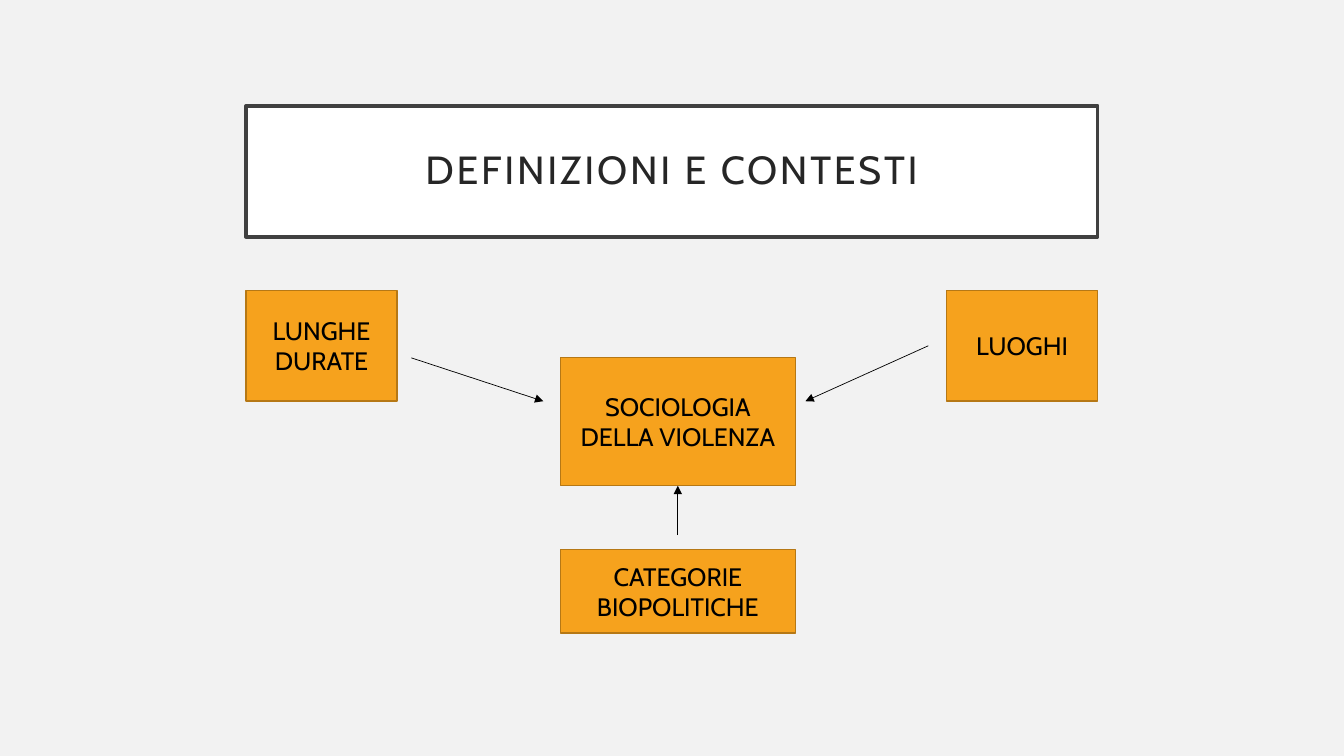
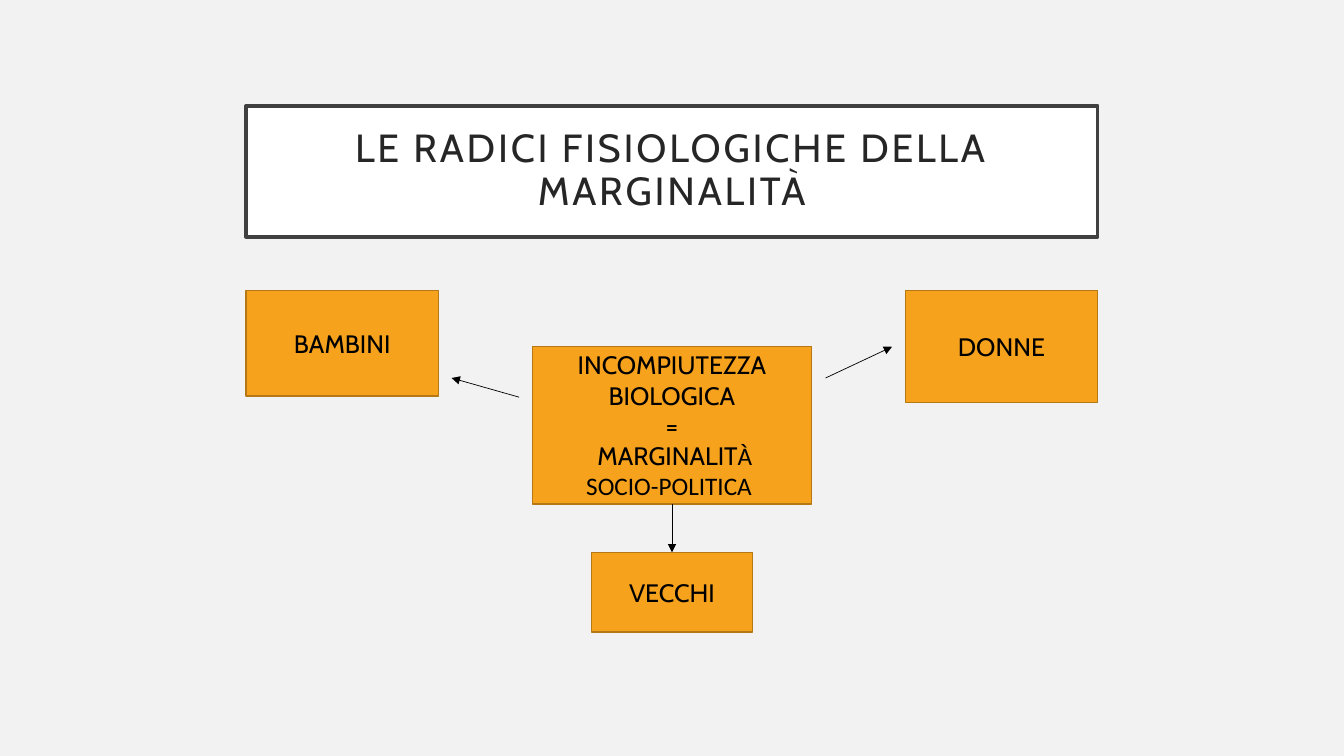
from dataclasses import dataclass
from typing import NamedTuple

from lxml import etree
from pptx import Presentation
from pptx.dml.color import RGBColor
from pptx.enum import shapes, text
from pptx.oxml import ns
from pptx.util import Pt

COLORS = {
    "background": "F2F2F2",
    "title_fill": "FFFFFF",
    "title_border": "404040",
    "title_text": "262626",
    "concept_fill": "F6A21D",
    "concept_border": "B67815",
    "ink": "000000",
}
FONT, ALT_FONT = "Cabin", "Calibri"
BOTTOM, TOP = 2, 0  # connection sites of a rectangle


class Area(NamedTuple):
    left: float
    top: float
    width: float
    height: float


class Point(NamedTuple):
    x: float
    y: float


class Joint(NamedTuple):
    concept: str
    site: int


class Span(NamedTuple):
    words: str
    font: str = FONT


@dataclass(frozen=True)
class BoxStyle:
    fill: str
    border: str
    border_width: float
    ink: str
    size: float
    margins: tuple[float, float] = (7.2, 3.6)  # horizontal, vertical
    line_spacing: float = 1.0
    tracking: float = 0


@dataclass(frozen=True)
class Concept:
    key: str
    area: Area
    paragraphs: list[list[Span]]


@dataclass(frozen=True)
class Arrow:
    start: Point | Joint
    end: Point | Joint


@dataclass(frozen=True)
class Diagram:
    title: str
    concepts: list[Concept]
    arrows: list[Arrow]


TITLE_AREA = Area(175.7, 75.6, 608.4, 93.6)
TITLE_STYLE = BoxStyle("title_fill", "title_border", 2.5, "title_text", 28,
                       (14.4, 14.4), 0.9, 2)
CONCEPT_STYLE = BoxStyle("concept_fill", "concept_border", 1, "ink", 18)

# Side concepts share the title's edges and one top line
LEFT, RIGHT = TITLE_AREA.left, TITLE_AREA.left + TITLE_AREA.width
SIDE_TOP = 207.4


def left_area(width: float, height: float) -> Area:
    return Area(LEFT, SIDE_TOP, width, height)


def right_area(width: float, height: float) -> Area:
    return Area(RIGHT - width, SIDE_TOP, width, height)


def centered_area(middle: float, top: float, width: float, height: float) -> Area:
    return Area(middle - width / 2, top, width, height)


CONTEXT_MIDDLE, ROOTS_MIDDLE = 484.2, 480

DIAGRAMS = [
    Diagram(
        "DEFINIZIONI E CONTESTI",
        [
            Concept("sociologia", centered_area(CONTEXT_MIDDLE, 255.6, 167.8, 91.4),
                    [[Span("SOCIOLOGIA DELLA VIOLENZA")]]),
            Concept("durate", left_area(108, 79.2), [[Span("LUNGHE DURATE")]]),
            Concept("luoghi", right_area(108, 79.2), [[Span("LUOGHI")]]),
            Concept("categorie", centered_area(CONTEXT_MIDDLE, 392.4, 167.8, 59.8),
                    [[Span("CATEGORIE BIOPOLITICHE")]]),
        ],
        [
            Arrow(Point(293.8, 255.6), Point(388.1, 286.6)),
            Arrow(Point(663.1, 247), Point(575.3, 286.6)),
            Arrow(Point(CONTEXT_MIDDLE, 382.3), Joint("sociologia", BOTTOM)),
        ],
    ),
    Diagram(
        "LE RADICI FISIOLOGICHE DELLA MARGINALITÀ",
        [
            Concept("incompiutezza", centered_area(ROOTS_MIDDLE, 247.7, 199.4, 112.3), [
                [Span("INCOMPIUTEZZA")],
                [Span("BIOLOGICA")],
                [Span("=")],
                [Span(" MARGINALIT"), Span("À", ALT_FONT)],
                [Span("SOCIO-POLITICA ", ALT_FONT)],
            ]),
            Concept("bambini", left_area(137.5, 75.6), [[Span("BAMBINI")]]),
            Concept("donne", right_area(137.5, 79.9), [[Span("DONNE")]]),
            Concept("vecchi", centered_area(ROOTS_MIDDLE, 394.6, 115.2, 56.9),
                    [[Span("VECCHI")]]),
        ],
        [
            Arrow(Point(370.8, 283.7), Point(322.6, 270)),
            Arrow(Point(589.7, 270), Point(637.2, 247.7)),
            Arrow(Joint("incompiutezza", BOTTOM), Joint("vecchi", TOP)),
        ],
    ),
]


def rgb(name: str) -> RGBColor:
    return RGBColor.from_string(COLORS[name])


def write_paragraph(paragraph, spans: list[Span], style: BoxStyle) -> None:
    paragraph.alignment = text.PP_ALIGN.CENTER
    paragraph.line_spacing = style.line_spacing
    paragraph.text = spans[0].words
    for span in spans[1:]:
        paragraph.add_run().text = span.words
    for run, span in zip(paragraph.runs, spans):
        run.font.name = span.font
        run.font.size = Pt(style.size)
        run.font.color.rgb = rgb(style.ink)
        if style.tracking:
            run.font._element.set("spc", str(round(style.tracking * 100)))


def draw_box(slide, area: Area, paragraphs: list[list[Span]], style: BoxStyle):
    box = slide.shapes.add_shape(shapes.MSO_SHAPE.RECTANGLE, *map(Pt, area))
    box.shadow.inherit = False
    box.fill.solid()
    box.fill.fore_color.rgb = rgb(style.fill)
    box.line.color.rgb = rgb(style.border)
    box.line.width = Pt(style.border_width)
    frame = box.text_frame
    frame.word_wrap = True
    frame.vertical_anchor = text.MSO_ANCHOR.MIDDLE
    frame.margin_left = frame.margin_right = Pt(style.margins[0])
    frame.margin_top = frame.margin_bottom = Pt(style.margins[1])
    for index, spans in enumerate(paragraphs):
        paragraph = frame.add_paragraph() if index else frame.paragraphs[0]
        write_paragraph(paragraph, spans, style)
    return box


def draw_arrow(slide, arrow: Arrow, boxes: dict) -> None:
    # Joined ends get their place from the box they touch
    start, end = (Point(0, 0) if isinstance(tip, Joint) else tip
                  for tip in (arrow.start, arrow.end))
    link = slide.shapes.add_connector(
        shapes.MSO_CONNECTOR.STRAIGHT, *map(Pt, (*start, *end)))
    if isinstance(arrow.start, Joint):
        link.begin_connect(boxes[arrow.start.concept], arrow.start.site)
    if isinstance(arrow.end, Joint):
        link.end_connect(boxes[arrow.end.concept], arrow.end.site)
    link.line.color.rgb = rgb("ink")
    link.line.width = Pt(0.5)
    outline = link.line._get_or_add_ln()
    etree.SubElement(outline, ns.qn("a:tailEnd"), type="triangle")
    etree.SubElement(outline.getparent(), ns.qn("a:effectLst"))


def draw_diagram(slide, diagram: Diagram) -> None:
    draw_box(slide, TITLE_AREA, [[Span(diagram.title)]], TITLE_STYLE)
    boxes = {concept.key: draw_box(slide, concept.area, concept.paragraphs, CONCEPT_STYLE)
             for concept in diagram.concepts}
    for arrow in diagram.arrows:
        draw_arrow(slide, arrow, boxes)


def main() -> None:
    deck = Presentation()
    deck.slide_width, deck.slide_height = Pt(960), Pt(540)
    # Shared background
    backdrop = deck.slide_master.background.fill
    backdrop.solid()
    backdrop.fore_color.rgb = rgb("background")
    blank = deck.slide_layouts[6]
    for diagram in DIAGRAMS:
        draw_diagram(deck.slides.add_slide(blank), diagram)
    deck.save("out.pptx")


if __name__ == "__main__":
    main()
